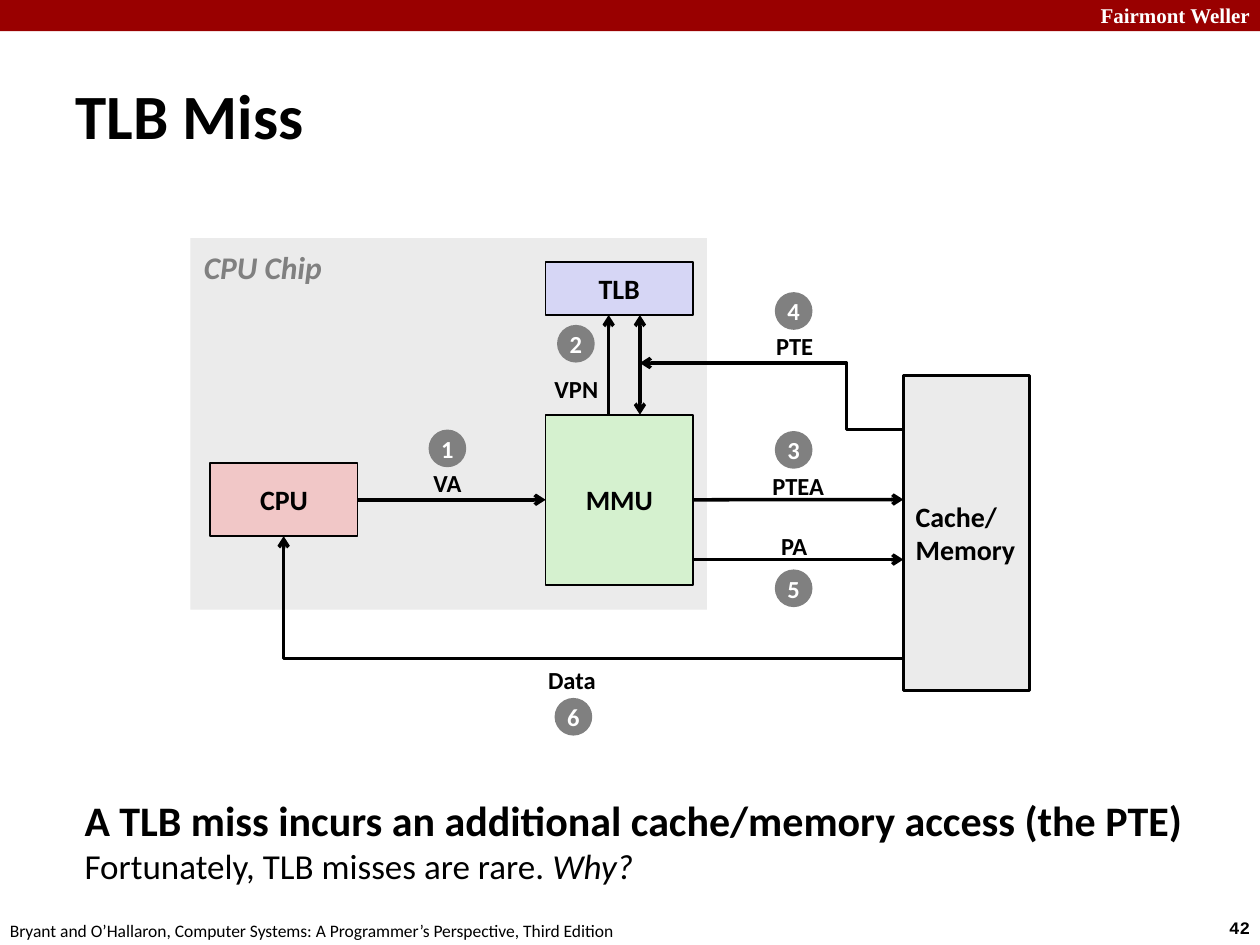
import pptx
import pptx.util
import pptx.dml.color
import pptx.enum.shapes
import pptx.enum.text
import pptx.oxml.ns

Cm = pptx.util.Cm
Pt = pptx.util.Pt
SHAPE = pptx.enum.shapes.MSO_SHAPE
LINK = pptx.enum.shapes.MSO_CONNECTOR
ALIGN = pptx.enum.text.PP_ALIGN
ANCHOR = pptx.enum.text.MSO_ANCHOR

BLACK = "000000"
WHITE = "FFFFFF"
GRAY = "808080"
PALE = "EBEBEB"


def color(code):
    return pptx.dml.color.RGBColor.from_string(code)


def place(box, left, top, width, height):
    box.left, box.top, box.width, box.height = Cm(left), Cm(top), Cm(width), Cm(height)


def style(font, size, code=BLACK, bold=True, italic=False, name="Calibri"):
    font.name = name
    font.size = Pt(size)
    font.bold = bold
    font.italic = italic
    font.color.rgb = color(code)


def write(box, text, size, align=ALIGN.CENTER, anchor=ANCHOR.MIDDLE, wrap=False, **look):
    frame = box.text_frame
    frame.text = text
    frame.word_wrap = wrap
    frame.vertical_anchor = anchor
    for para in frame.paragraphs:
        para.alignment = align
        style(para.font, size, **look)


def add_block(page, kind, bounds, fill, line_width=None):
    block = page.shapes.add_shape(kind, *map(Cm, bounds))
    block.shadow.inherit = False
    block.fill.solid()
    block.fill.fore_color.rgb = color(fill)
    if line_width:
        block.line.color.rgb = color(BLACK)
        block.line.width = Pt(line_width)
    else:
        block.line.fill.background()
    return block


def add_unit(page, text, bounds, fill, line_width=1, align=ALIGN.CENTER):
    unit = add_block(page, SHAPE.RECTANGLE, bounds, fill, line_width)
    write(unit, text, 16, align)
    return unit


def add_text(page, text, bounds, size, **look):
    box = page.shapes.add_textbox(*map(Cm, bounds))
    write(box, text, size, **look)


def add_label(page, text, center_x, center_y):
    width, height = 1.9, 0.84
    bounds = (center_x - width / 2, center_y - height / 2, width, height)
    add_text(page, text, bounds, 14)


def add_badge(page, number, center_x, center_y):
    size = 0.76
    bounds = (center_x - size / 2, center_y - size / 2, size, size)
    badge = add_block(page, SHAPE.OVAL, bounds, GRAY)
    write(badge, str(number), 14, code=WHITE)


def add_arrow(page, start, end, kind=LINK.STRAIGHT, both=False):
    arrow = page.shapes.add_connector(kind, *map(Cm, start + end))
    arrow.line.color.rgb = color(BLACK)
    arrow.line.width = Pt(2)
    line = arrow.line._get_or_add_ln()
    for tag in ("a:headEnd", "a:tailEnd") if both else ("a:tailEnd",):
        tip = pptx.oxml.ns.qn(tag)
        line.append(line.makeelement(tip, {"type": "arrow"}))
    properties = arrow._element.spPr
    properties.append(properties.makeelement(pptx.oxml.ns.qn("a:effectLst"), {}))
    return arrow


def fill_title(page):
    title = page.shapes.title
    place(title, 1.27, 1.22, 24.1, 2.18)
    write(title, "TLB Miss", 36, ALIGN.LEFT, wrap=True)


def fill_body(page):
    body = page.placeholders[1]
    place(body, 1.45, 15.88, 22.91, 2.54)
    frame = body.text_frame
    frame.word_wrap = True
    frame.auto_size = pptx.enum.text.MSO_AUTO_SIZE.NONE
    para = frame.paragraphs[0]
    properties = para._p.get_or_add_pPr()
    properties.set("marL", "0")
    properties.set("indent", "0")
    properties.append(properties.makeelement(pptx.oxml.ns.qn("a:buNone"), {}))
    spans = [
        ("A TLB miss incurs an additional cache/memory access (the PTE)", 24, True, False),
        ("Fortunately, TLB misses are rare. ", 20, False, False),
        ("Why?", 20, False, True),
    ]
    for index, (text, size, bold, italic) in enumerate(spans):
        span = para.add_run()
        span.text = text
        style(span.font, size, bold=bold, italic=italic)
        if index == 0:
            para.add_line_break()


def add_frame(page):
    add_block(page, SHAPE.RECTANGLE, (0, 0, 25.4, 0.63), "990000")
    add_text(page, "Fairmont Weller", (21.84, -0.08, 3.61, 0.76), 12,
             align=ALIGN.RIGHT, code=WHITE, name="Times New Roman")
    add_text(page, "42", (24.3, 18.36, 1.15, 0.69), 10,
             align=ALIGN.RIGHT, name="Courier New")
    add_text(page, "Bryant and O’Hallaron, Computer Systems: A Programmer’s Perspective, Third Edition",
             (-0.05, 18.42, 12.9, 0.69), 10, align=ALIGN.LEFT, bold=False)


def add_diagram(page):
    add_block(page, SHAPE.RECTANGLE, (3.84, 4.8, 10.41, 7.49), PALE)
    add_text(page, "CPU Chip", (3.86, 4.88, 2.95, 1.02), 18,
             align=ALIGN.LEFT, code=GRAY, italic=True)
    cpu = add_unit(page, "CPU", (4.24, 9.34, 2.97, 1.47), "F1C7C7")
    mmu = add_unit(page, "MMU", (11, 8.36, 2.97, 3.43), "D5F1CF")
    add_unit(page, "TLB", (11, 5.28, 2.97, 1.07), "D6D6F5")
    add_unit(page, "Cache/\nMemory", (18.21, 7.57, 2.54, 6.35), PALE, 1.5, ALIGN.LEFT)

    memory_left, mmu_right, middle = 18.21, 13.97, 10.07
    request = add_arrow(page, (7.21, middle), (11, middle))
    request.begin_connect(cpu, 3)
    request.end_connect(mmu, 1)
    fetch = add_arrow(page, (mmu_right, middle), (memory_left, middle))
    fetch.begin_connect(mmu, 3)
    add_arrow(page, (mmu_right, 11.28), (memory_left, 11.28))
    add_arrow(page, (12.27, 8.36), (12.27, 6.35))
    add_arrow(page, (12.9, 6.35), (12.9, 8.36), both=True)

    entry = add_arrow(page, (memory_left, 8.66), (12.9, 7.32), LINK.ELBOW)
    guides = entry._element.spPr.prstGeom.get_or_add_avLst()
    guides.append(guides.makeelement(pptx.oxml.ns.qn("a:gd"),
                                     {"name": "adj1", "fmla": "val 21600"}))
    data = add_arrow(page, (memory_left, 13.28), (5.72, 10.81), LINK.ELBOW)
    data._element.spPr.prstGeom.set("prst", "bentConnector2")

    steps = [
        ("VA", (9.02, 9.74), (9.02, 9.04)),
        ("VPN", (11.62, 7.84), (11.61, 6.93)),
        ("PTEA", (16.09, 9.79), (16, 9.07)),
        ("PTE", (16.02, 6.97), (16, 6.27)),
        ("PA", (16.01, 11.01), (16, 11.86)),
        ("Data", (11.53, 13.7), (11.56, 14.45)),
    ]
    for number, (text, label_center, badge_center) in enumerate(steps, 1):
        add_label(page, text, *label_center)
        add_badge(page, number, *badge_center)


def main():
    deck = pptx.Presentation()
    deck.slide_width = Cm(25.4)
    deck.slide_height = Cm(19.05)
    page = deck.slides.add_slide(deck.slide_layouts[1])
    add_frame(page)
    fill_title(page)
    add_diagram(page)
    fill_body(page)
    deck.save("out.pptx")


if __name__ == "__main__":
    main()
